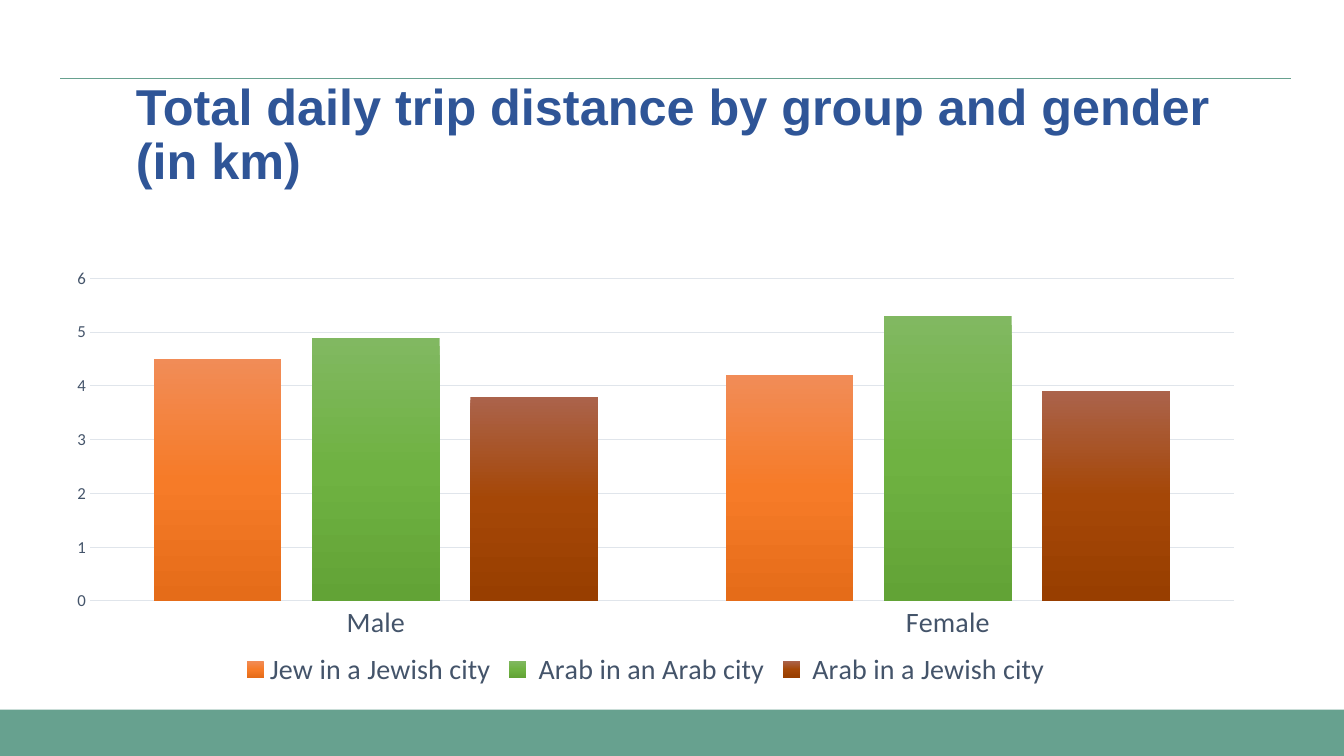
from lxml.etree import SubElement
from pptx import Presentation
from pptx.chart.data import CategoryChartData
from pptx.dml.color import RGBColor
from pptx.enum.chart import XL_CHART_TYPE as ChartType, XL_LEGEND_POSITION as LegendPosition
from pptx.enum.chart import XL_TICK_MARK as TickMark
from pptx.enum.shapes import MSO_CONNECTOR as Connector, MSO_SHAPE as Shape
from pptx.enum.text import MSO_ANCHOR as Anchor
from pptx.oxml import parse_xml
from pptx.oxml.ns import nsdecls, qn
from pptx.util import Inches, Pt


def rgb(color):
    return RGBColor.from_string(color)


class TripSlide:
    """Hold the style and the current slide, and draw its elements."""

    green, title_blue, slate, grid = "67A18F", "2F5597", "44546A", "E0E5EB"
    title_font, chart_font = "Arial", "Calibri"

    def __init__(self, slide):
        self.slide = slide

    def set_font(self, font, name, size, color, bold=False):
        font.name, font.size, font.bold = name, Pt(size), bold
        font.color.rgb = rgb(color)

    def add_band(self, left, top, width, height):
        band = self.slide.shapes.add_shape(
            Shape.RECTANGLE, *map(Inches, (left, top, width, height)))
        band.shadow.inherit = False
        band.fill.solid()
        band.fill.fore_color.rgb = rgb(self.green)
        band.line.fill.background()

    def add_rule(self, start_x, end_x, y):
        rule = self.slide.shapes.add_connector(
            Connector.STRAIGHT, *map(Inches, (start_x, y, end_x, y)))
        rule.line.color.rgb = rgb(self.green)
        rule.line.width = Pt(0.5)
        SubElement(rule._element.spPr, qn("a:effectLst"))

    def add_title(self, text, left, top, width, height):
        frame = self.slide.shapes.add_textbox(
            *map(Inches, (left, top, width, height))).text_frame
        frame.word_wrap = True
        frame.vertical_anchor = Anchor.TOP
        title = frame.paragraphs[0]
        title.text = text
        title.line_spacing = 0.9
        self.set_font(title.font, self.title_font, 36, self.title_blue, True)

    def fill_gradient(self, series, colors):
        stops = "".join(
            f'<a:gs pos="{index * 50000}"><a:srgbClr val="{color}"/></a:gs>'
            for index, color in enumerate(colors))
        series._element.get_or_add_spPr().insert(0, parse_xml(
            f'<a:gradFill {nsdecls("a")} rotWithShape="1"><a:gsLst>{stops}</a:gsLst>'
            '<a:lin ang="5400000" scaled="0"/></a:gradFill>'))

    def set_plot_area(self, chart, x, y, w, h):
        area = chart._chartSpace.chart.plotArea
        for old_layout in area.findall(qn("c:layout")):
            area.remove(old_layout)
        modes = '<c:xMode val="edge"/><c:yMode val="edge"/>'
        area.insert(0, parse_xml(
            f'<c:layout {nsdecls("c")}><c:manualLayout><c:layoutTarget val="inner"/>{modes}'
            f'<c:x val="{x}"/><c:y val="{y}"/><c:w val="{w}"/><c:h val="{h}"/>'
            '</c:manualLayout></c:layout>'))

    def add_columns(self, categories, groups, left, top, width, height):
        distances = CategoryChartData(number_format="0.0")
        distances.categories = categories
        for name, values, _ in groups:
            distances.add_series(name, values)
        chart = self.slide.shapes.add_chart(
            ChartType.COLUMN_CLUSTERED, *map(Inches, (left, top, width, height)),
            distances).chart
        self.set_font(chart.font, self.chart_font, 10, "000000")
        chart.has_title = False
        self.set_plot_area(chart, 0.05, 0.207, 0.926, 0.618)

        columns = chart.plots[0]
        columns.gap_width, columns.overlap = 100, -24
        columns.vary_by_categories = False
        for series, (_, _, colors) in zip(columns.series, groups):
            series.invert_if_negative = False
            self.fill_gradient(series, colors)

        genders, kilometres = chart.category_axis, chart.value_axis
        for axis, size in ((genders, 20), (kilometres, 12)):
            axis.major_tick_mark = axis.minor_tick_mark = TickMark.NONE
            self.set_font(axis.tick_labels.font, self.chart_font, size, self.slate)
        kilometres.minimum_scale, kilometres.maximum_scale = 0, 6
        kilometres.major_unit = 1
        kilometres.tick_labels.number_format = "0"
        kilometres.tick_labels.number_format_is_linked = False
        kilometres.format.line.fill.background()
        for line in (genders.format.line, kilometres.major_gridlines.format.line):
            line.color.rgb = rgb(self.grid)
            line.width = Pt(0.75)

        chart.has_legend = True
        chart.legend.position = LegendPosition.BOTTOM
        chart.legend.include_in_layout = False
        self.set_font(chart.legend.font, self.chart_font, 20, self.slate)


def main():
    deck = Presentation()
    deck.slide_width, deck.slide_height = Inches(13.33), Inches(7.5)
    trips = TripSlide(deck.slides.add_slide(deck.slide_layouts[6]))
    trips.add_band(0, 7.04, 13.33, 0.46)
    trips.add_rule(0.6, 12.8, 0.78)
    trips.add_title("Total daily trip distance by group and gender (in km)",
                    1.25, 0.76, 11.5, 1.23)
    groups = [
        ("Jew in a Jewish city", (4.5, 4.2), ("F18C57", "F67B28", "E56C19")),
        (" Arab in an Arab city", (4.9, 5.3), ("81B861", "6FB242", "62A336")),
        (" Arab in a Jewish city", (3.8, 3.9), ("AB634B", "A54707", "983E00")),
    ]
    trips.add_columns(("Male", "Female"), groups, 0.28, 1.69, 12.25, 5.18)
    deck.save("out.pptx")


if __name__ == "__main__":
    main()
